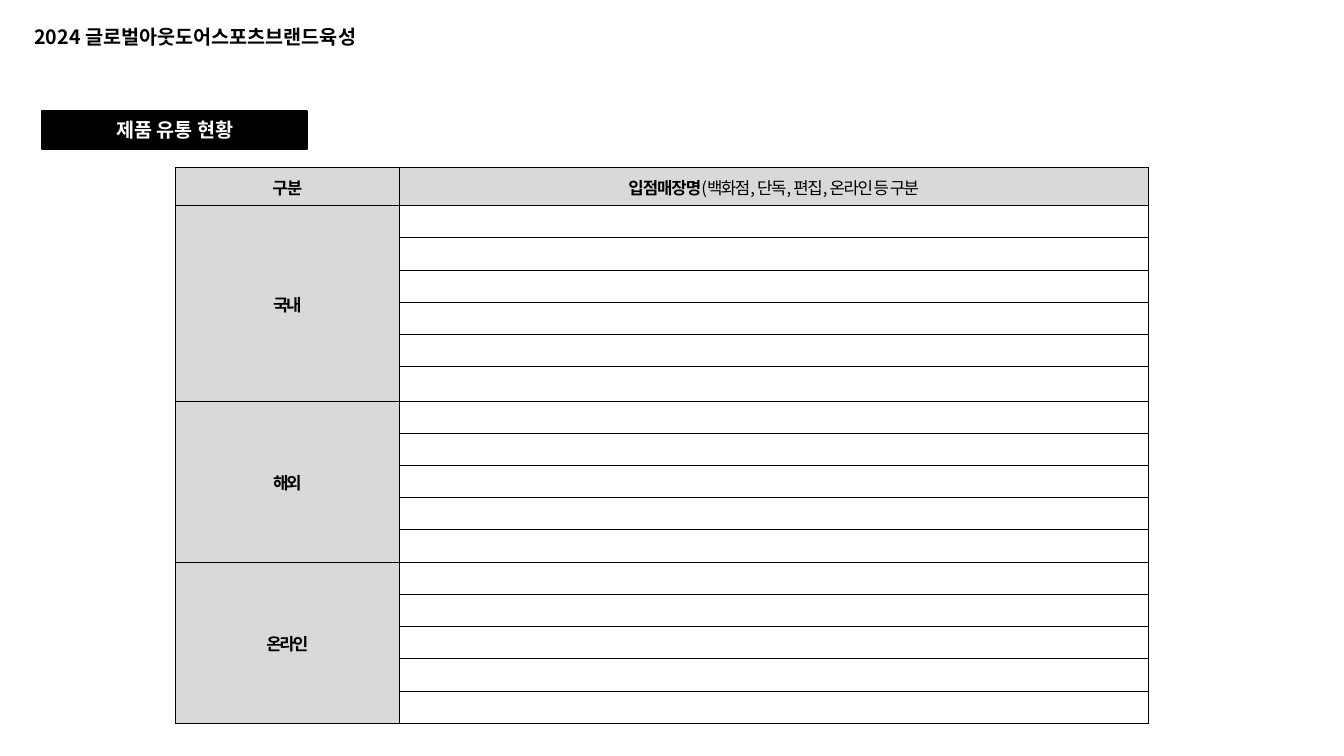
import dataclasses

import lxml.etree
import pptx
import pptx.dml.color
import pptx.enum.shapes
import pptx.enum.text
import pptx.oxml.ns
import pptx.util

Inches, Pt = pptx.util.Inches, pptx.util.Pt
ALIGN, ANCHOR = pptx.enum.text.PP_ALIGN, pptx.enum.text.MSO_ANCHOR
qn = pptx.oxml.ns.qn


@dataclasses.dataclass(frozen=True)
class Theme:
    font: str = "Noto Sans CJK KR"
    ink: str = "000000"
    paper: str = "FFFFFF"
    header: str = "D9D9D9"
    heading_size: float = 14
    table_size: float = 12
    empty_size: float = 10
    border: float = 0.28


THEME = Theme()
WIDTH, HEIGHT = 13.33, 7.5

# Table grid, in inches
TABLE_LEFT, TABLE_TOP = 1.74, 1.66
COLUMNS = [2.22, 7.43]
HEADER_ROW, STORE_ROW = 0.35, 0.32
EXTRA_ROW_HEIGHT = {6: 0.02}
GROUPS = [("국내", 6), ("해외", 5), ("온라인", 5)]


def color(value):
    return pptx.dml.color.RGBColor.from_string(value)


def add_text(para, text, *, size, ink=THEME.ink, bold=True, spacing=0,
             align=ALIGN.CENTER, line=1.0):
    para.alignment = align
    para.line_spacing = line
    span = para.add_run()
    span.text = text
    span.font.size = Pt(size)
    span.font.bold = bold
    span.font.name = THEME.font
    span.font.color.rgb = color(ink)
    properties = span._r.get_or_add_rPr()
    if spacing:
        properties.set("spc", str(round(spacing * 100)))
    lxml.etree.SubElement(properties, qn("a:ea"), typeface=THEME.font)


def add_title(page, text):
    title = page.shapes.title
    title.left, title.top = Inches(0.24), Inches(0.2)
    title.width, title.height = Inches(4.62), Inches(0.34)
    frame = title.text_frame
    frame.auto_size = pptx.enum.text.MSO_AUTO_SIZE.NONE
    frame.vertical_anchor = ANCHOR.TOP
    add_text(frame.paragraphs[0], text, size=THEME.heading_size, align=ALIGN.LEFT)


def add_banner(page, text):
    box = page.shapes.add_shape(
        pptx.enum.shapes.MSO_SHAPE.RECTANGLE,
        Inches(0.42), Inches(1.1), Inches(2.63), Inches(0.38))
    box.shadow.inherit = False
    box.fill.solid()
    box.fill.fore_color.rgb = color(THEME.ink)
    box.line.color.rgb = color(THEME.ink)
    box.line.width = Pt(1.5)
    box.text_frame.vertical_anchor = ANCHOR.MIDDLE
    add_text(box.text_frame.paragraphs[0], text,
             size=THEME.heading_size, ink=THEME.paper)


def style_cell(cell, fill):
    properties = cell._tc.get_or_add_tcPr()
    for side in ("a:lnL", "a:lnR", "a:lnT", "a:lnB"):
        edge = lxml.etree.SubElement(properties, qn(side), w=str(Pt(THEME.border)))
        paint = lxml.etree.SubElement(edge, qn("a:solidFill"))
        lxml.etree.SubElement(paint, qn("a:srgbClr"), val=THEME.ink)
    cell.fill.solid()
    cell.fill.fore_color.rgb = color(fill)
    cell.vertical_anchor = ANCHOR.MIDDLE
    cell.margin_left = cell.margin_right = Inches(0.08)
    cell.margin_top = cell.margin_bottom = Pt(4)


def fill_cell(cell, *spans):
    for text, bold, spacing in spans:
        add_text(cell.text_frame.paragraphs[0], text, size=THEME.table_size,
                 bold=bold, spacing=spacing, line=1.1)


def add_store_table(page):
    heights = [HEADER_ROW] + [STORE_ROW] * sum(count for _, count in GROUPS)
    for row, extra in EXTRA_ROW_HEIGHT.items():
        heights[row] += extra
    table = page.shapes.add_table(
        len(heights), len(COLUMNS), Inches(TABLE_LEFT), Inches(TABLE_TOP),
        Inches(sum(COLUMNS)), Inches(sum(heights))).table
    table.first_row = table.horz_banding = False
    for column, width in zip(table.columns, COLUMNS):
        column.width = Inches(width)

    # Fills, borders and heights
    for row, height in enumerate(heights):
        table.rows[row].height = Inches(height)
        for column in range(len(COLUMNS)):
            cell = table.cell(row, column)
            shaded = row == 0 or column == 0
            style_cell(cell, THEME.header if shaded else THEME.paper)
            if row:
                cell.margin_top = cell.margin_bottom = Pt(2)
                lxml.etree.SubElement(
                    cell.text_frame.paragraphs[0]._p, qn("a:endParaRPr"),
                    sz=str(round(THEME.empty_size * 100)))

    # Header and group labels
    fill_cell(table.cell(0, 0), ("구분", True, -0.6))
    fill_cell(table.cell(0, 1), ("입점매장명", True, -0.8),
              ("(백화점, 단독, 편집, 온라인 등 구분", False, -1.1))
    first = 1
    for label, count in GROUPS:
        table.cell(first, 0).merge(table.cell(first + count - 1, 0))
        fill_cell(table.cell(first, 0), (label, True, -1.6))
        first += count


def main():
    deck = pptx.Presentation()
    deck.slide_width, deck.slide_height = Inches(WIDTH), Inches(HEIGHT)
    page = deck.slides.add_slide(deck.slide_layouts.get_by_name("Title Only"))
    add_title(page, "2024 글로벌아웃도어스포츠브랜드육성")
    add_banner(page, "제품 유통 현황")
    add_store_table(page)
    deck.save("out.pptx")


if __name__ == "__main__":
    main()
